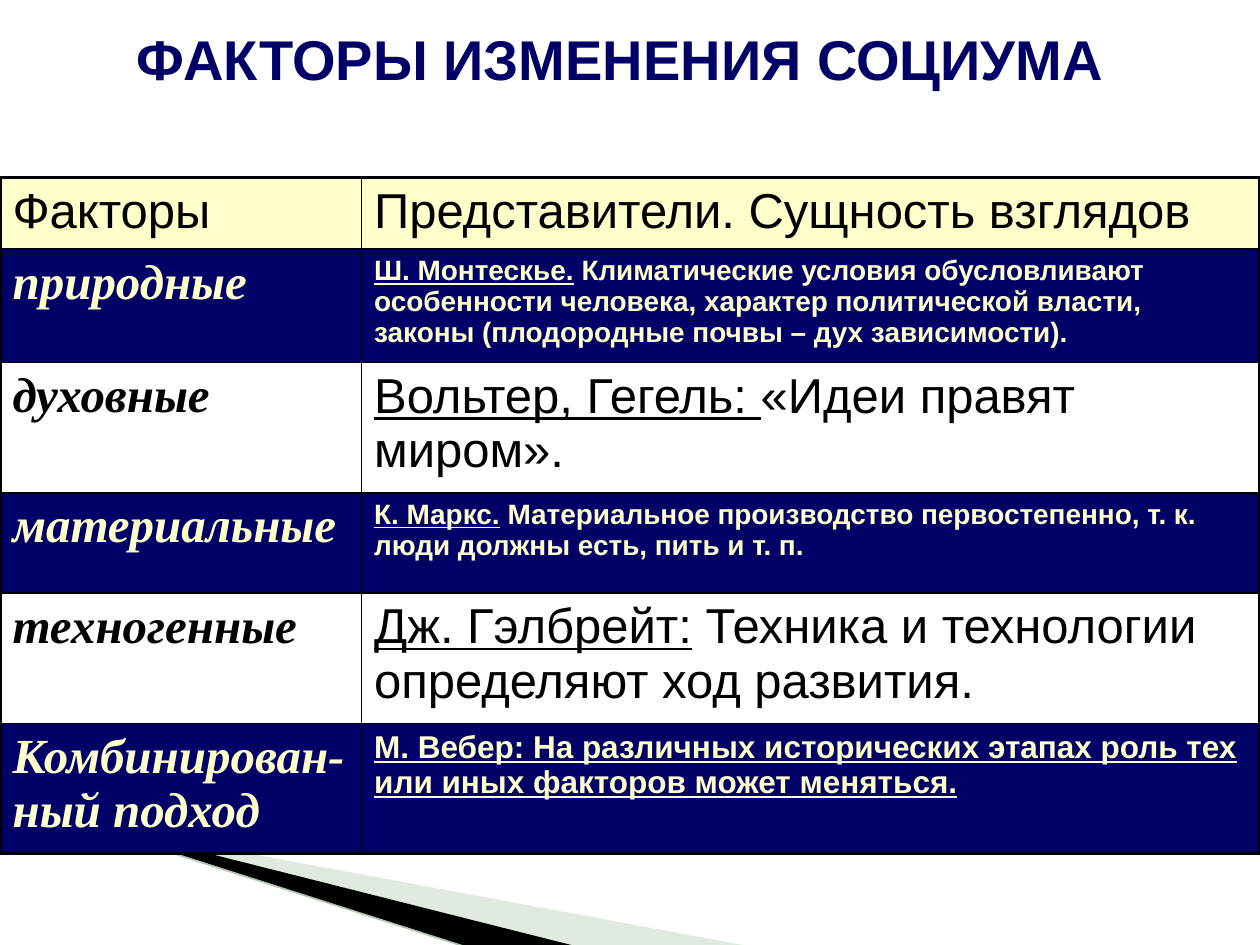
from dataclasses import dataclass

from lxml import etree
from pptx import Presentation
from pptx.dml.color import RGBColor
from pptx.enum import shapes, text
from pptx.oxml import ns
from pptx.util import Pt

NAVY = RGBColor(0x00, 0x00, 0x66)
CREAM = RGBColor(0xFF, 0xFF, 0xCC)
BLACK = RGBColor(0x00, 0x00, 0x00)
WHITE = RGBColor(0xFF, 0xFF, 0xFF)
SAGE = RGBColor(0xB3, 0xCB, 0xB5)
SAGE_LINE = RGBColor(0xAC, 0xC6, 0xAE)

SANS, SERIF = "Arial", "Times New Roman"
THICK, THIN = 2.25, 1
COLUMN_WIDTHS = (206.64, 513.36)


@dataclass
class Factor:
    """One table row; the thinkers' names are underlined."""
    names: tuple[str, ...]
    thinkers: str
    view: str
    height: float
    dark: bool = False
    view_size: float = 28


FACTORS = [
    Factor(("природные",), "Ш. Монтескье.",
           " Климатические условия обусловливают особенности человека, характер "
           "политической власти, законы (плодородные почвы – дух зависимости).",
           64, True, 16),
    Factor(("духовные",), "Вольтер, Гегель: ", "«Идеи правят миром».", 73.4),
    Factor(("материальные",), "К. Маркс.",
           " Материальное производство первостепенно, т. к. люди должны есть, "
           "пить и т. п.", 57.3, True, 16),
    Factor(("техногенные",), "Дж. Гэлбрейт:",
           " Техника и технологии определяют ход развития.", 73.4),
    Factor(("Комбинирован-", "ный подход"),
           "М. Вебер: На различных исторических этапах роль тех или иных "
           "факторов может меняться.", "", 73.4, True, 18),
]
HEADINGS = ("Факторы", "Представители. Сущность взглядов")
HEADING_HEIGHT = 40.4


def add_run(paragraph, wording: str, color: RGBColor, **formats) -> None:
    run = paragraph.add_run()
    run.text = wording
    run.font.color.rgb = color
    for key, value in formats.items():
        setattr(run.font, key, value)


def fill_cell(cell, color: RGBColor) -> None:
    cell.fill.solid()
    cell.fill.fore_color.rgb = color


def set_borders(cell, widths: dict[str, float]) -> None:
    """Draw black cell borders; they must precede the fill in the XML."""
    properties = cell._tc.get_or_add_tcPr()
    for position, (side, width) in enumerate(widths.items()):
        border = etree.Element(ns.qn(f"a:ln{side}"), w=str(Pt(width)))
        fill = etree.SubElement(border, ns.qn("a:solidFill"))
        etree.SubElement(fill, ns.qn("a:srgbClr"), val=str(BLACK))
        properties.insert(position, border)


def add_wedge(slide, points: list[tuple[float, float]], color: RGBColor,
              opacity: int = 100) -> None:
    corners = [(Pt(x), Pt(y)) for x, y in points]
    builder = slide.shapes.build_freeform(*corners[0], scale=1.0)
    builder.add_line_segments(corners[1:], close=True)
    wedge = builder.convert_to_shape()
    wedge.shadow.inherit = False
    wedge.line.fill.background()
    wedge.fill.solid()
    wedge.fill.fore_color.rgb = color
    if opacity < 100:
        tint = wedge._element.spPr.find(".//" + ns.qn("a:srgbClr"))
        etree.SubElement(tint, ns.qn("a:alpha"), val=str(opacity * 1000))


def add_decoration(slide) -> None:
    add_wedge(slide, [(39.6, 468.7), (428.4, 540.7), (328.3, 540.7), (39.6, 468)],
              SAGE, 40)
    add_wedge(slide, [(38.2, 467.3), (329, 540.7), (267.8, 541.4), (38.9, 468)], BLACK)
    edge = slide.shapes.add_connector(shapes.MSO_CONNECTOR.STRAIGHT,
                                      Pt(-0.7), Pt(455.8), Pt(267.1), Pt(541.4))
    edge.line.color.rgb = SAGE_LINE
    edge.line.width = Pt(0.95)
    etree.SubElement(edge._element.spPr, ns.qn("a:effectLst"))


def add_title(slide) -> None:
    title = slide.shapes.add_textbox(Pt(33.8), Pt(11.5), Pt(641.5), Pt(43.2))
    frame = title.text_frame
    frame.word_wrap = True
    frame.vertical_anchor = text.MSO_ANCHOR.MIDDLE
    heading = frame.paragraphs[0]
    heading.alignment = text.PP_ALIGN.CENTER
    add_run(heading, "ФАКТОРЫ ИЗМЕНЕНИЯ СОЦИУМА", NAVY,
            name=SANS, size=Pt(32), bold=True)


def fill_factor_row(factor: Factor, name_cell, view_cell) -> None:
    ink, background = (CREAM, NAVY) if factor.dark else (BLACK, WHITE)
    for cell in (name_cell, view_cell):
        fill_cell(cell, background)
    name_frame = name_cell.text_frame
    for index, name in enumerate(factor.names):
        line = name_frame.add_paragraph() if index else name_frame.paragraphs[0]
        add_run(line, name, ink, name=SERIF, size=Pt(28), bold=True, italic=True)
    formats = dict(name=SANS, size=Pt(factor.view_size), bold=factor.dark)
    statement = view_cell.text_frame.paragraphs[0]
    add_run(statement, factor.thinkers, ink, underline=True, **formats)
    if factor.view:
        add_run(statement, factor.view, ink, **formats)


def add_factor_table(slide) -> None:
    heights = [HEADING_HEIGHT] + [factor.height for factor in FACTORS]
    table = slide.shapes.add_table(
        len(heights), len(COLUMN_WIDTHS), Pt(0), Pt(101.5),
        Pt(sum(COLUMN_WIDTHS)), Pt(sum(heights))).table
    table.first_row = table.horz_banding = False
    for column, width in zip(table.columns, COLUMN_WIDTHS):
        column.width = Pt(width)
    for row, height in zip(table.rows, heights):
        row.height = Pt(height)

    for column, heading in enumerate(HEADINGS):
        cell = table.cell(0, column)
        fill_cell(cell, CREAM)
        add_run(cell.text_frame.paragraphs[0], heading, BLACK, name=SANS, size=Pt(28))
    for row, factor in enumerate(FACTORS, start=1):
        fill_factor_row(factor, table.cell(row, 0), table.cell(row, 1))

    last_row, last_column = len(heights) - 1, len(COLUMN_WIDTHS) - 1
    for row in range(len(heights)):
        for column in range(len(COLUMN_WIDTHS)):
            outer = {"L": column == 0, "R": column == last_column,
                     "T": row == 0, "B": row == last_row}
            set_borders(table.cell(row, column),
                        {side: THICK if edge else THIN for side, edge in outer.items()})


def main() -> None:
    deck = Presentation()
    deck.slide_width, deck.slide_height = Pt(720), Pt(540)
    slide = deck.slides.add_slide(deck.slide_layouts[6])
    add_decoration(slide)
    add_title(slide)
    add_factor_table(slide)
    deck.save("out.pptx")


if __name__ == "__main__":
    main()
